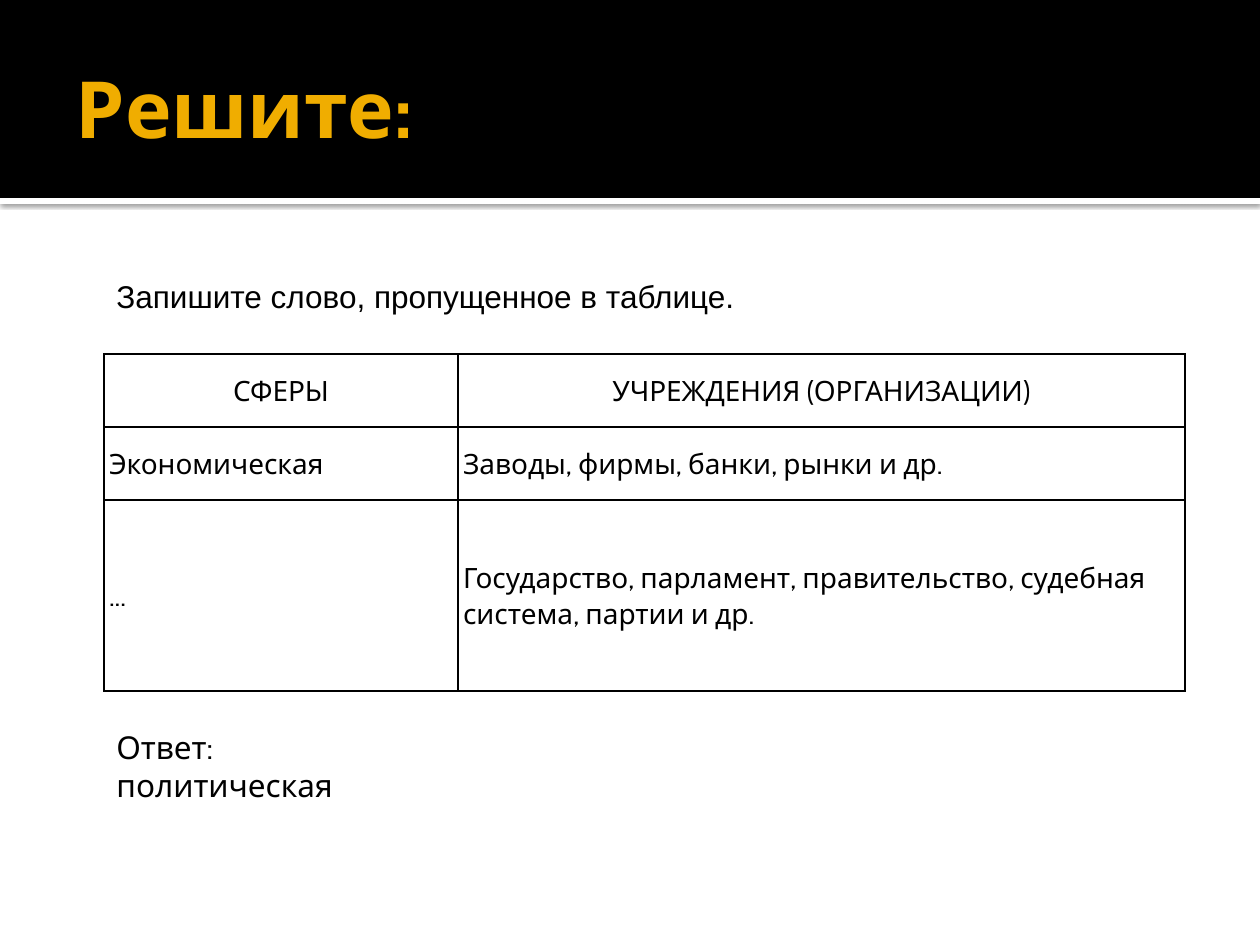
import pptx
import pptx.util
import pptx.dml.color
import pptx.enum.shapes
import pptx.enum.text
import pptx.oxml
import pptx.oxml.ns

SCALE = 914400 / 126  # EMU per px
ALIGN = pptx.enum.text.PP_ALIGN
MIDDLE = pptx.enum.text.MSO_ANCHOR.MIDDLE
THEME = {
    "black": "000000", "white": "FFFFFF", "gold": "F0AD00",
    "font": "Cabin", "prompt_font": "Arial",
    "title": 45, "text": 18, "cell": 16,
}


def px(*lengths):
    return [pptx.util.Emu(round(length * SCALE)) for length in lengths]


def write(frame, text, size, font=THEME["font"], color=THEME["black"],
          bold=False, align=ALIGN.LEFT, spacing=1.0):
    para = frame.paragraphs[0]
    para.alignment = align
    para.line_spacing = spacing
    span = para.add_run()
    span.text = text
    span.font.name = font
    span.font.size = pptx.util.Pt(size)
    span.font.bold = bold
    span.font.color.rgb = pptx.dml.color.RGBColor.from_string(color)


deck = pptx.Presentation()
deck.slide_width, deck.slide_height = px(1260, 945)
page = deck.slides.add_slide(deck.slide_layouts[5])

# Header band over a thin shadowed stripe, both behind the title
bands = []
for depth, (top, height, color) in enumerate([(198, 6, "white"), (0, 198, "black")]):
    band = page.shapes.add_shape(pptx.enum.shapes.MSO_SHAPE.RECTANGLE,
                                 *px(0, top, 1260, height))
    band.shadow.inherit = False
    band.fill.solid()
    band.fill.fore_color.rgb = pptx.dml.color.RGBColor.from_string(THEME[color])
    band.line.fill.background()
    page.shapes._spTree.insert(2 + depth, band._element)
    bands.append(band)

effects = bands[0]._element.spPr.find(pptx.oxml.ns.qn("a:effectLst"))
effects.append(pptx.oxml.parse_xml(
    f'<a:outerShdw {pptx.oxml.ns.nsdecls("a")} blurRad="31750" dist="10160" dir="5400000">'
    f'<a:srgbClr val="{THEME["black"]}"><a:alpha val="60000"/></a:srgbClr></a:outerShdw>'))

# Title
title = page.shapes.title
title.left, title.top, title.width, title.height = px(63, 21, 1134, 173)
title.text_frame.auto_size = pptx.enum.text.MSO_AUTO_SIZE.NONE
title.text_frame.vertical_anchor = MIDDLE
title.text_frame.margin_right = pptx.util.Inches(0.05)
write(title.text_frame, "Решите:", THEME["title"], color=THEME["gold"], bold=True)

# Table of spheres and institutions
rows = [
    ("СФЕРЫ", "УЧРЕЖДЕНИЯ (ОРГАНИЗАЦИИ)"),
    ("Экономическая", "Заводы, фирмы, банки, рынки и др."),
    ("...", "Государство, парламент, правительство, судебная система, партии и др."),
]
table = page.shapes.add_table(3, 2, *px(104, 354, 1081, 337)).table
table.first_row = table.horz_banding = False
for column, width in zip(table.columns, px(354, 727)):
    column.width = width
for row, height in zip(table.rows, px(73, 73, 191)):
    row.height = height

for row_index, texts in enumerate(rows):
    for column_index, text in enumerate(texts):
        cell = table.cell(row_index, column_index)
        cell.vertical_anchor = MIDDLE
        cell.margin_left = cell.margin_right = pptx.util.Inches(0.04)
        cell.margin_top = cell.margin_bottom = pptx.util.Inches(0.04)
        for side in "LRTB":
            cell._tc.get_or_add_tcPr().append(pptx.oxml.parse_xml(
                f'<a:ln{side} {pptx.oxml.ns.nsdecls("a")} w="12700"><a:solidFill>'
                f'<a:srgbClr val="{THEME["black"]}"/></a:solidFill></a:ln{side}>'))
        cell.fill.background()
        write(cell.text_frame, text, THEME["cell"], spacing=1.07,
              align=ALIGN.LEFT if row_index else ALIGN.CENTER)

# Task above the table, answer below it
notes = [
    ((104, 265, 1009, 57), "Запишите слово, пропущенное в таблице.",
     {"font": THEME["prompt_font"], "align": ALIGN.JUSTIFY, "spacing": 1.15}),
    ((104, 722, 312, 50), "Ответ: политическая", {}),
]
for place, text, look in notes:
    box = page.shapes.add_textbox(*px(*place))
    box.text_frame.word_wrap = True
    write(box.text_frame, text, THEME["text"], **look)

deck.save("out.pptx")
